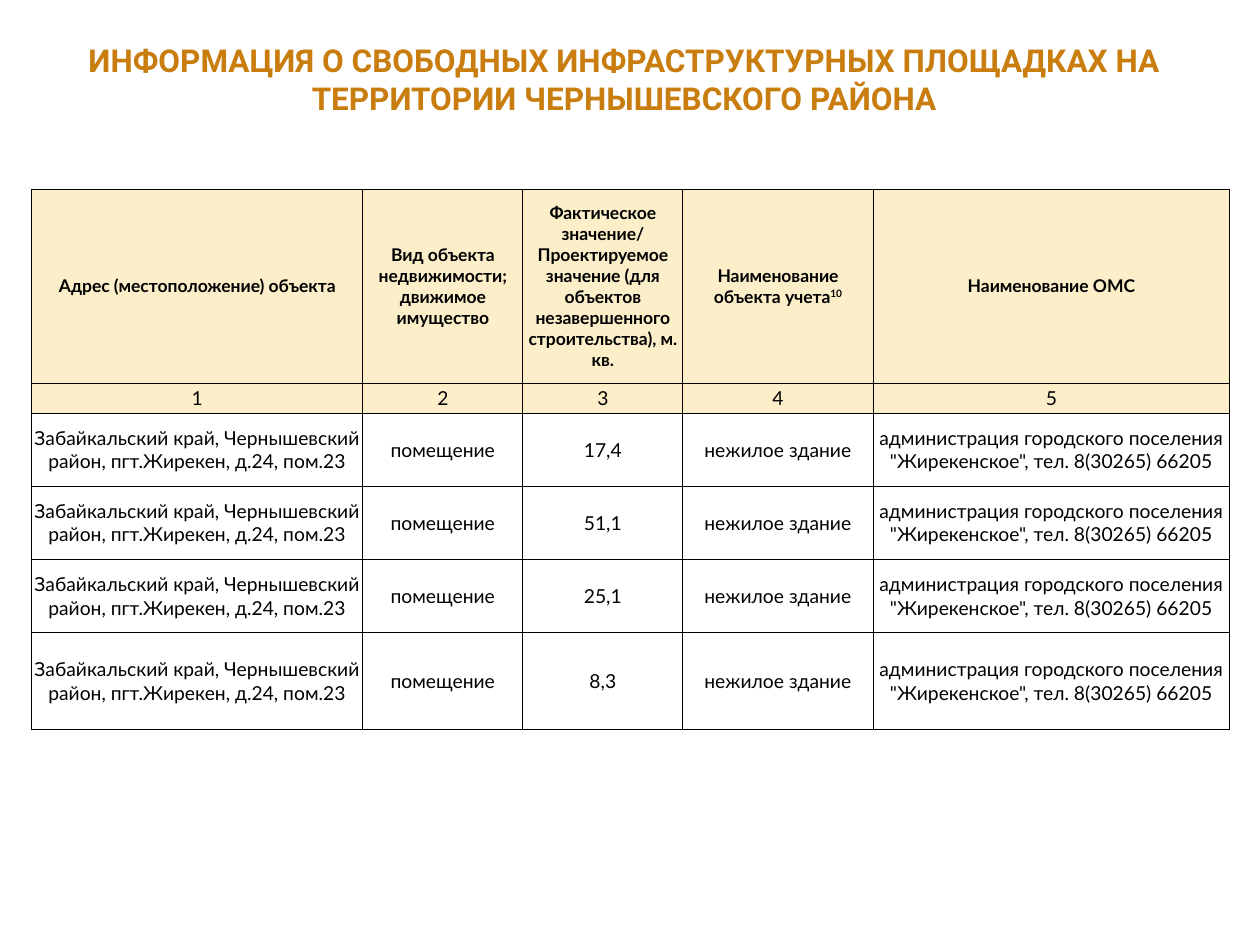
from dataclasses import dataclass

from pptx import Presentation
from pptx.dml.color import RGBColor
from pptx.enum.text import MSO_ANCHOR, MSO_AUTO_SIZE, PP_ALIGN
from pptx.oxml import parse_xml
from pptx.oxml.ns import nsdecls
from pptx.util import Inches, Pt

CENTER = PP_ALIGN.CENTER
MIDDLE = MSO_ANCHOR.MIDDLE
FIXED_SIZE = MSO_AUTO_SIZE.NONE
TITLE_ONLY = 5


@dataclass(frozen=True)
class Theme:
    title_font: str = "Roboto"
    table_font: str = "Lato"
    title_size: float = 18
    header_size: float = 10
    body_size: float = 11
    border_width: float = 0.5
    title_color: str = "C87D0E"
    text_color: str = "000000"
    border_color: str = "000000"
    header_fill: str = "FBEEC9"
    body_fill: str = "FFFFFF"


TITLE = "ИНФОРМАЦИЯ О СВОБОДНЫХ ИНФРАСТРУКТУРНЫХ ПЛОЩАДКАХ НА ТЕРРИТОРИИ ЧЕРНЫШЕВСКОГО РАЙОНА"
HEADERS = [
    ("Адрес (местоположение) объекта",),
    ("Вид объекта недвижимости; движимое имущество",),
    ("Фактическое значение/ Проектируемое значение (для объектов незавершенного строительства), м. кв.",),
    ("Наименование объекта учета", "10"),
    ("Наименование ОМС",),
]
ADDRESS = "Забайкальский край, Чернышевский район, пгт.Жирекен, д.24, пом.23"
OWNER = 'администрация городского поселения "Жирекенское", тел. 8(30265) 66205'
AREAS = ["17,4", "51,1", "25,1", "8,3"]
COLUMN_WIDTHS = [2.63, 1.27, 1.27, 1.51, 2.83]
ROW_HEIGHTS = [1.54, 0.24, 0.58, 0.58, 0.58, 0.77]


class SlideBuilder:
    def __init__(self, deck, theme):
        self.theme = theme
        self.slide = deck.slides.add_slide(deck.slide_layouts[TITLE_ONLY])

    def span(self, para, text, font, size, color, bold=False):
        span = para.add_run()
        span.text = text
        span.font.name = font
        span.font.size = Pt(size)
        span.font.bold = bold
        span.font.color.rgb = RGBColor.from_string(color)
        return span

    def title(self, text, left, top, width, height):
        box = self.slide.shapes.title
        box.left, box.top = Inches(left), Inches(top)
        box.width, box.height = Inches(width), Inches(height)
        frame = box.text_frame
        frame.word_wrap = True
        frame.auto_size = FIXED_SIZE
        frame.vertical_anchor = MIDDLE
        para = frame.paragraphs[0]
        para.alignment = CENTER
        self.span(para, text, self.theme.title_font, self.theme.title_size,
                  self.theme.title_color, True)

    def borders(self, cell):
        properties = cell._tc.get_or_add_tcPr()
        for side in ("lnL", "lnR", "lnT", "lnB"):
            properties.append(parse_xml(
                f'<a:{side} {nsdecls("a")} w="{Pt(self.theme.border_width)}">'
                f'<a:solidFill><a:srgbClr val="{self.theme.border_color}"/></a:solidFill>'
                f'</a:{side}>'))

    def cell(self, cell, texts, size, fill, bold):
        cell.margin_left = cell.margin_right = cell.margin_top = cell.margin_bottom = 0
        cell.vertical_anchor = MIDDLE
        self.borders(cell)
        cell.fill.solid()
        cell.fill.fore_color.rgb = RGBColor.from_string(fill)
        para = cell.text_frame.paragraphs[0]
        para.alignment = CENTER
        for position, text in enumerate(texts):
            span = self.span(para, text, self.theme.table_font, size,
                             self.theme.text_color, bold)
            if position:
                span.font._element.set("baseline", "30000")

    def table(self, rows, left, top, widths, heights):
        table = self.slide.shapes.add_table(
            len(rows), len(widths), Inches(left), Inches(top),
            Inches(sum(widths)), Inches(sum(heights))).table
        for column, width in zip(table.columns, widths):
            column.width = Inches(width)
        for row, height in zip(table.rows, heights):
            row.height = Inches(height)
        for row_index, row in enumerate(rows):
            heading = row_index == 0
            size = self.theme.header_size if heading else self.theme.body_size
            fill = self.theme.header_fill if row_index < 2 else self.theme.body_fill
            for column_index, texts in enumerate(row):
                self.cell(table.cell(row_index, column_index), texts, size, fill, heading)


def main():
    deck = Presentation()
    deck.slide_width, deck.slide_height = Inches(10), Inches(7.5)
    page = SlideBuilder(deck, Theme())
    page.title(TITLE, 0.33, 0.25, 9.25, 0.75)
    numbers = [(str(number),) for number in range(1, len(HEADERS) + 1)]
    premises = [[(ADDRESS,), ("помещение",), (area,), ("нежилое здание",), (OWNER,)]
                for area in AREAS]
    page.table([HEADERS, numbers, *premises], 0.25, 1.5, COLUMN_WIDTHS, ROW_HEIGHTS)
    deck.save("out.pptx")


if __name__ == "__main__":
    main()
